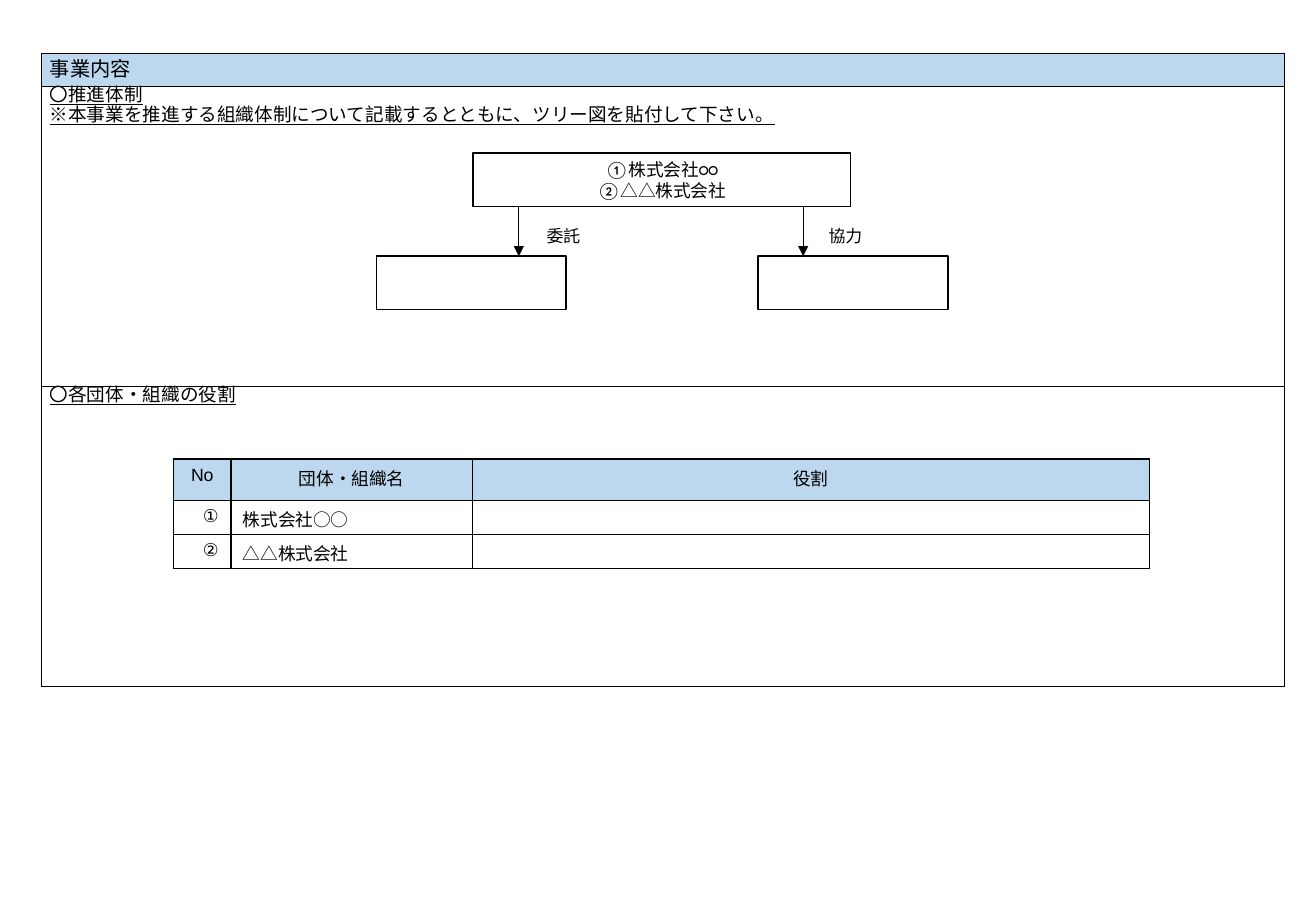
from dataclasses import dataclass

from lxml import etree
from pptx import Presentation
from pptx import util as u
from pptx.dml.color import RGBColor
from pptx.enum import shapes, text
from pptx.oxml import ns

ALIGN = text.PP_ALIGN


@dataclass(frozen=True)
class Theme:
    ink: RGBColor = RGBColor(0x00, 0x00, 0x00)
    header: RGBColor = RGBColor(0xBD, 0xD7, 0xEE)
    body_font: str = "Noto Sans CJK JP"
    diagram_font: str = "Calibri"
    number_font: str = "Arial"
    title_size: float = 12
    section_size: float = 11
    cell_size: float = 10.5
    label_size: float = 10
    hairline: float = 0.25
    arrow_line: float = 0.5
    box_line: float = 1


class SlideBuilder:
    def __init__(self, slide, theme):
        self.slide = slide
        self.theme = theme
        self.diagram = slide.shapes

    def start_group(self):
        """Send the following boxes, arrows and labels to a new group."""
        self.diagram = self.slide.shapes.add_group_shape().shapes

    def set_text(self, frame, content, size, font, align=None, underline=None, spacing=None):
        frame.text = content
        for paragraph in frame.paragraphs:
            paragraph.alignment = align
            if spacing:
                paragraph.line_spacing = u.Pt(spacing)
            for run in paragraph.runs:
                run.font.size = u.Pt(size)
                run.font.name = font
                run.font.bold = False
                run.font.underline = underline
                run.font.color.rgb = self.theme.ink
                east_asian = etree.SubElement(run.font._element, ns.qn("a:ea"))
                east_asian.set("typeface", font)
            if not paragraph.runs:
                end = etree.SubElement(paragraph._p, ns.qn("a:endParaRPr"))
                end.set("sz", str(int(size * 100)))

    def table(self, left, top, columns, rows):
        frame = self.slide.shapes.add_table(
            len(rows), len(columns), u.Inches(left), u.Inches(top),
            u.Inches(sum(columns)), u.Inches(sum(rows)))
        table = frame.table
        table.first_row = table.horz_banding = False
        for column, width in zip(table.columns, columns):
            column.width = u.Inches(width)
        for row, height in zip(table.rows, rows):
            row.height = u.Inches(height)
        return table

    def style_cell(self, cell, border, filled, margins):
        """Set fill, margins (left/right, top, bottom) and all four borders."""
        side, top, bottom = map(u.Inches, margins)
        cell.margin_left = cell.margin_right = side
        cell.margin_top, cell.margin_bottom = top, bottom
        properties = cell._tc.get_or_add_tcPr()
        for edge in ("a:lnL", "a:lnR", "a:lnT", "a:lnB"):
            line = etree.SubElement(properties, ns.qn(edge), w=str(int(u.Pt(border))))
            fill = etree.SubElement(line, ns.qn("a:solidFill"))
            etree.SubElement(fill, ns.qn("a:srgbClr"), val=str(self.theme.ink))
        if filled:
            cell.fill.solid()
            cell.fill.fore_color.rgb = self.theme.header
        else:
            cell.fill.background()

    def box(self, left, top, width, height, content=""):
        shape = self.diagram.add_shape(
            shapes.MSO_SHAPE.RECTANGLE, *map(u.Inches, (left, top, width, height)))
        shape.shadow.inherit = False
        shape.fill.background()
        shape.line.color.rgb = self.theme.ink
        shape.line.width = u.Pt(self.theme.box_line)
        if content:
            shape.text_frame.vertical_anchor = text.MSO_ANCHOR.MIDDLE
            self.set_text(shape.text_frame, content, self.theme.cell_size,
                          self.theme.diagram_font, ALIGN.CENTER)

    def down_arrow(self, x, top, bottom):
        arrow = self.diagram.add_connector(
            shapes.MSO_CONNECTOR.STRAIGHT, *map(u.Inches, (x, top, x, bottom)))
        arrow.line.color.rgb = self.theme.ink
        arrow.line.width = u.Pt(self.theme.arrow_line)
        outline = arrow._element.spPr.find(ns.qn("a:ln"))
        etree.SubElement(outline, ns.qn("a:tailEnd"), type="triangle")
        etree.SubElement(arrow._element.spPr, ns.qn("a:effectLst"))

    def label(self, left, top, width, height, content):
        frame = self.diagram.add_textbox(
            *map(u.Inches, (left, top, width, height))).text_frame
        frame.word_wrap = False
        frame.auto_size = text.MSO_AUTO_SIZE.SHAPE_TO_FIT_TEXT
        self.set_text(frame, content, self.theme.label_size, self.theme.diagram_font)


def add_business_frame(builder):
    theme = builder.theme
    table = builder.table(0.34, 0.44, [10.23], [0.27, 2.47, 2.47])
    contents = [
        "事業内容",
        "〇推進体制\n※本事業を推進する組織体制について記載するとともに、ツリー図を貼付して下さい。",
        "〇各団体・組織の役割",
    ]
    for index, content in enumerate(contents):
        cell = table.cell(index, 0)
        is_title = index == 0
        builder.style_cell(cell, theme.hairline, is_title, (0.07, 0, 0))
        if is_title:
            builder.set_text(cell.text_frame, content, theme.title_size,
                             theme.body_font, ALIGN.JUSTIFY)
        else:
            builder.set_text(cell.text_frame, content, theme.section_size,
                             theme.body_font, ALIGN.JUSTIFY, underline=True, spacing=12)


def add_organization_tree(builder):
    builder.start_group()
    lead_top, member_top, height = 1.26, 2.11, 0.44
    builder.box(3.89, lead_top, 3.11, height, "①株式会社○○\n②△△株式会社")
    for box_left, arrow_x, label_left, relation in (
            (3.1, 4.27, 4.4, "委託"), (6.24, 6.61, 6.72, "協力")):
        builder.box(box_left, member_top, 1.56, height)
        builder.down_arrow(arrow_x, lead_top + height, member_top)
        builder.label(label_left, 1.81, 0.48, 0.27, relation)


def add_role_table(builder):
    theme = builder.theme
    rows = [
        ("No", "団体・組織名", "役割"),
        ("①", "株式会社○○", ""),
        ("②", "△△株式会社", ""),
    ]
    table = builder.table(1.43, 3.78, [0.47, 1.99, 5.57], [0.34, 0.28, 0.28])
    for row_index, row in enumerate(rows):
        for column_index, content in enumerate(row):
            cell = table.cell(row_index, column_index)
            is_header, is_number = row_index == 0, column_index == 0
            builder.style_cell(cell, theme.box_line, is_header, (0.1, 0.05, 0))
            align = ALIGN.CENTER if is_header else ALIGN.RIGHT if is_number else ALIGN.LEFT
            font = theme.number_font if is_number else theme.body_font
            builder.set_text(cell.text_frame, content, theme.cell_size, font, align)


def main():
    presentation = Presentation()
    presentation.slide_width = u.Inches(10.83)
    presentation.slide_height = u.Inches(7.5)
    slide = presentation.slides.add_slide(presentation.slide_layouts[6])
    builder = SlideBuilder(slide, Theme())
    add_business_frame(builder)
    add_organization_tree(builder)
    add_role_table(builder)
    presentation.save("out.pptx")


if __name__ == "__main__":
    main()
